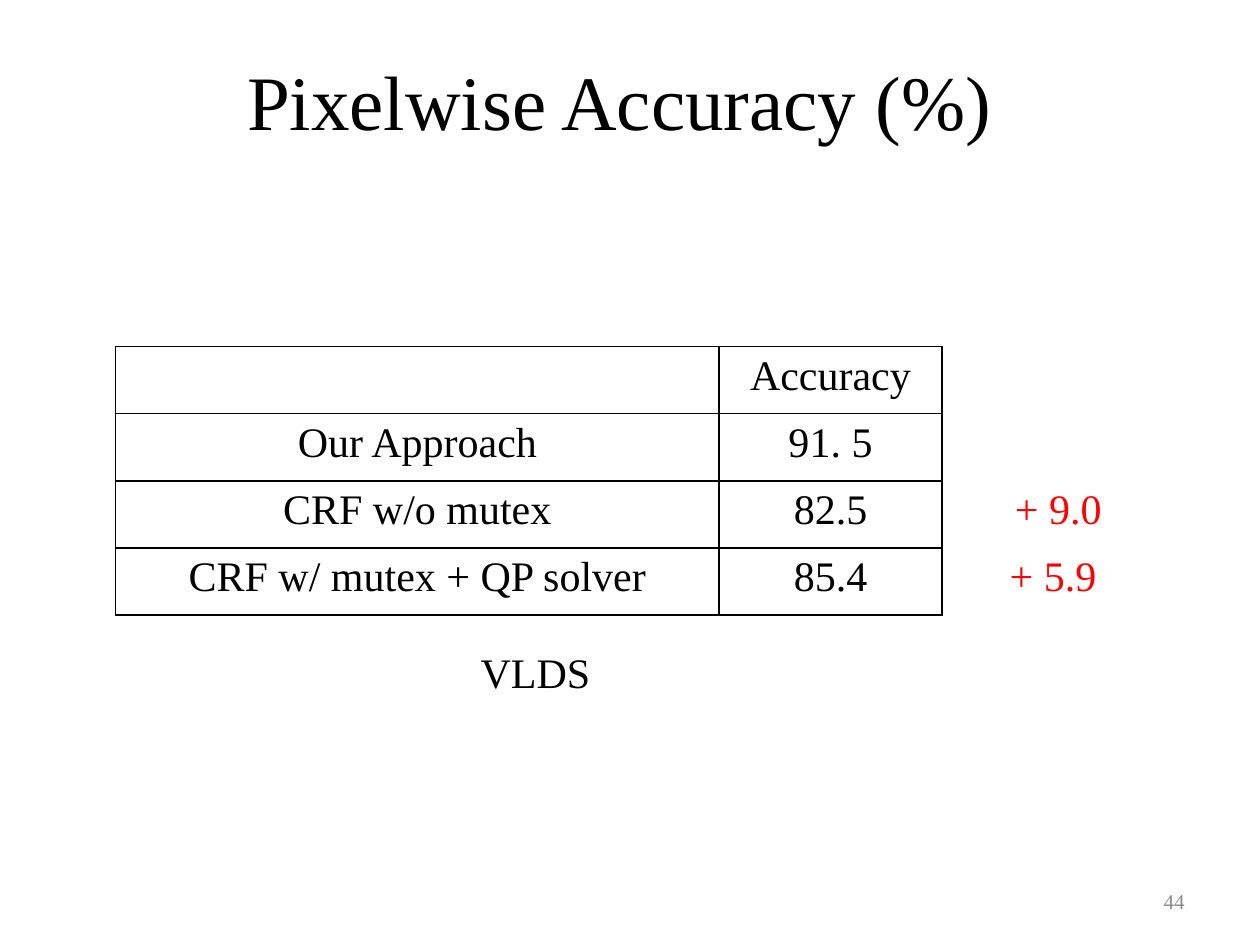
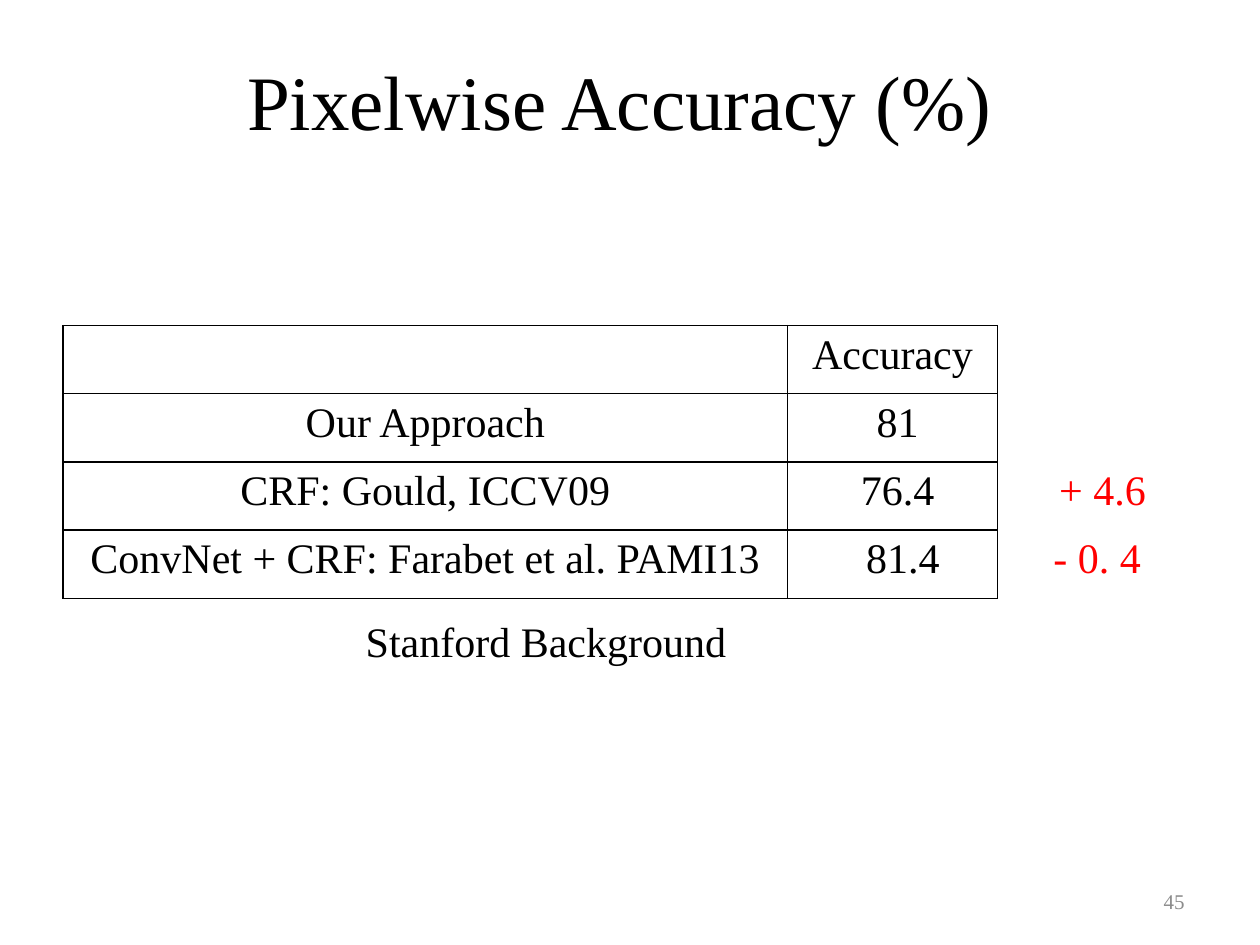
from dataclasses import dataclass

from lxml import etree
from pptx import Presentation
from pptx import util as u
from pptx.dml.color import RGBColor
from pptx.enum import text as t
from pptx.oxml import ns

PX = 7620
FONT = "Times New Roman"
COLORS = {"ink": "000000", "gap": "FF0000", "page": "8C8C8C"}
TITLE = "Pixelwise Accuracy (%)"
TITLE_BOX = (100, 20, 980, 150)
PAGE_BOX = (860, 834, 280, 48)
CAPTION_SIZE = (540, 60)
CELL_MARGIN = 12
SPACE = 10


@dataclass(frozen=True)
class Result:
    method: str
    accuracy: str
    gap: str = ""
    accuracy_shift: int = 0
    gap_shift: int = 0


@dataclass(frozen=True)
class Benchmark:
    page: int
    dataset: str
    caption_at: tuple[int, int]
    table_at: tuple[int, int]
    columns: tuple[int, int, int]
    row_height: int
    results: tuple[Result, ...]


BENCHMARKS = (
    Benchmark(44, "VLDS", (240, 610), (110, 330), (575, 212, 212), 64, (
        Result("Our Approach", "91. 5"),
        Result("CRF w/o mutex", "82.5", "+ 9.0", gap_shift=1),
        Result("CRF w/ mutex + QP solver", "85.4", "+ 5.9"),
    )),
    Benchmark(45, "Stanford Background", (250, 580), (60, 310), (690, 200, 190), 65, (
        Result("Our Approach", "81", accuracy_shift=1),
        Result("CRF: Gould, ICCV09", "76.4", "+ 4.6", accuracy_shift=1, gap_shift=1),
        Result("ConvNet + CRF: Farabet et al. PAMI13", "81.4", "- 0. 4", accuracy_shift=2),
    )),
)


def px(*lengths: int) -> list[u.Emu]:
    return [u.Emu(length * PX) for length in lengths]


def write(frame, words: str, *, size: int = 24, color: str = "ink",
          align=t.PP_ALIGN.CENTER, anchor=None) -> None:
    frame.word_wrap = True
    if anchor is not None:
        frame.vertical_anchor = anchor
    paragraph = frame.paragraphs[0]
    paragraph.alignment = align
    run = paragraph.add_run()
    run.text = words
    run.font.name = FONT
    run.font.size = u.Pt(size)
    run.font.color.rgb = RGBColor.from_string(COLORS[color])


def draw_borders(cell, visible: str) -> None:
    properties = cell._tc.get_or_add_tcPr()
    for position, side in enumerate("LRTB"):
        line = etree.Element(ns.qn(f"a:ln{side}"), w=str(u.Pt(1)))
        if side in visible:
            fill = etree.SubElement(line, ns.qn("a:solidFill"))
            etree.SubElement(fill, ns.qn("a:srgbClr"), val=COLORS["ink"])
        else:
            etree.SubElement(line, ns.qn("a:noFill"))
        properties.insert(position, line)


def draw_results(slide, benchmark: Benchmark) -> None:
    rows = (Result("", "Accuracy"), *benchmark.results)
    size = (sum(benchmark.columns), benchmark.row_height * len(rows))
    table = slide.shapes.add_table(
        len(rows), len(benchmark.columns), *px(*benchmark.table_at, *size)).table
    table.first_row = table.horz_banding = False
    for column, width in zip(table.columns, px(*benchmark.columns)):
        column.width = width
    for row, result in zip(table.rows, rows):
        row.height = px(benchmark.row_height)[0]
        entries = (
            (result.method, 0, "ink", "LRTB"),
            (result.accuracy, result.accuracy_shift, "ink", "LRTB"),
            (result.gap, result.gap_shift, "gap", "L"),
        )
        for cell, (words, shift, color, sides) in zip(row.cells, entries):
            cell.fill.background()
            cell.margin_left = px(CELL_MARGIN + shift * SPACE)[0]
            draw_borders(cell, sides)
            if words:
                write(cell.text_frame, words, color=color)


def build_slide(deck, benchmark: Benchmark) -> None:
    slide = deck.slides.add_slide(deck.slide_layouts[5])
    title = slide.shapes.title
    title.left, title.top, title.width, title.height = px(*TITLE_BOX)
    write(title.text_frame, TITLE, size=44, anchor=t.MSO_ANCHOR.MIDDLE)
    draw_results(slide, benchmark)
    caption = slide.shapes.add_textbox(*px(*benchmark.caption_at, *CAPTION_SIZE))
    write(caption.text_frame, benchmark.dataset)
    page = slide.shapes.add_textbox(*px(*PAGE_BOX))
    write(page.text_frame, str(benchmark.page), size=12, color="page",
          align=t.PP_ALIGN.RIGHT, anchor=t.MSO_ANCHOR.MIDDLE)


def main() -> None:
    deck = Presentation()
    deck.slide_width, deck.slide_height = px(1200, 900)
    for benchmark in BENCHMARKS:
        build_slide(deck, benchmark)
    deck.save("out.pptx")


if __name__ == "__main__":
    main()
